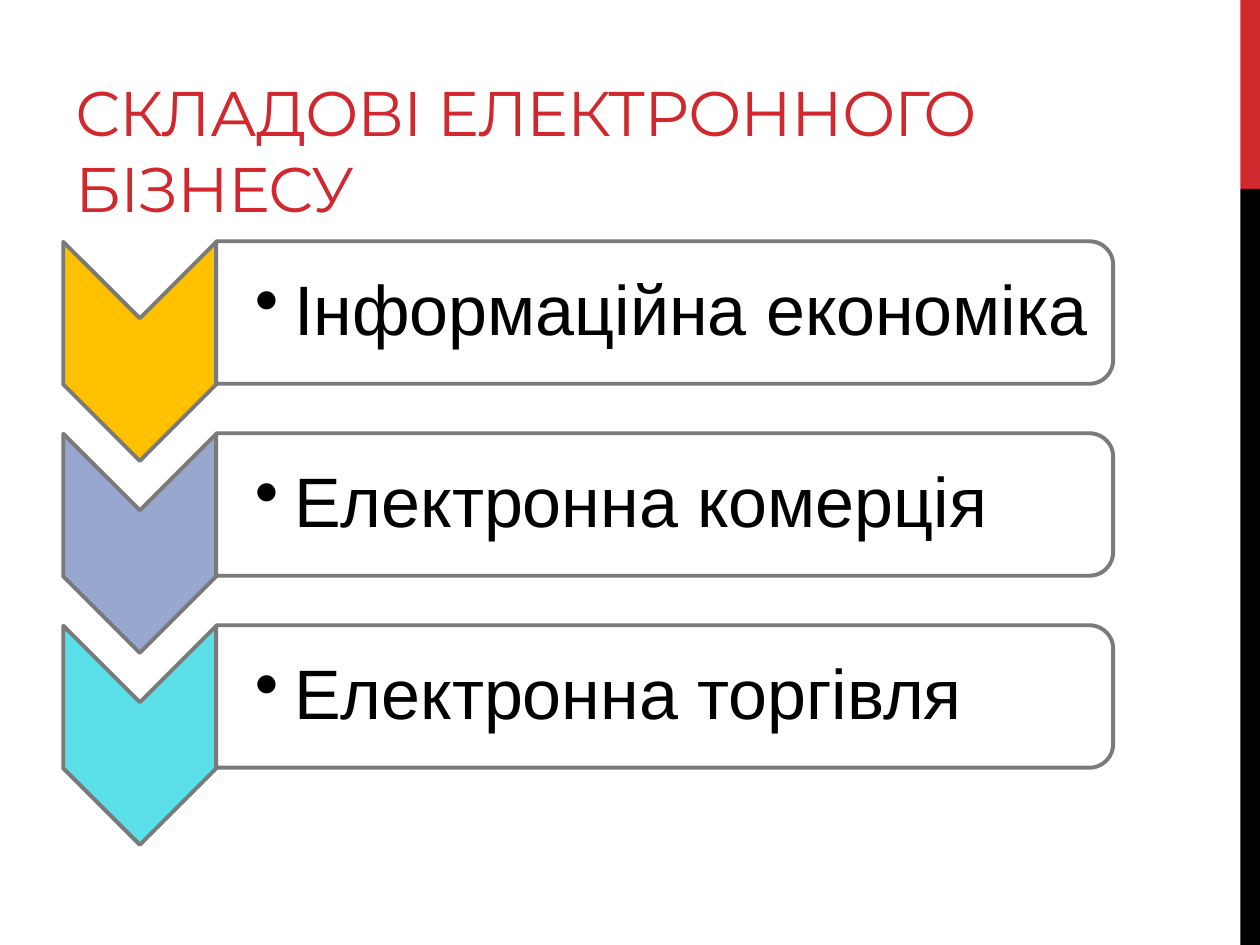
from pptx import Presentation
from pptx.dml.color import RGBColor
from pptx.enum.shapes import MSO_SHAPE as SHAPE
from pptx.enum.text import MSO_ANCHOR as ANCHOR
from pptx.oxml.ns import qn
from pptx.util import Pt
from lxml.etree import SubElement

RED = RGBColor(0xD1, 0x28, 0x2E)
BLACK = RGBColor(0, 0, 0)
WHITE = RGBColor(0xFF, 0xFF, 0xFF)
GRAY = RGBColor(0x7A, 0x7A, 0x7A)
AMBER = RGBColor(0xFF, 0xC0, 0x00)
LAVENDER = RGBColor(0x97, 0xA7, 0xD0)
CYAN = RGBColor(0x5B, 0xDF, 0xE9)

prs = Presentation()
prs.slide_width, prs.slide_height = Pt(720), Pt(540)
s = prs.slides.add_slide(prs.slide_layouts[6])


def add_shape(kind, x, y, w, h, fill, line=None):
    sp = s.shapes.add_shape(kind, Pt(x), Pt(y), Pt(w), Pt(h))
    sp.shadow.inherit = False
    sp.fill.solid()
    sp.fill.fore_color.rgb = fill
    if line is None:
        sp.line.fill.background()
    else:
        sp.line.color.rgb = line
        sp.line.width = Pt(2.25)
    return sp


def add_text(x, y, w, h, text, font, size, color, anchor):
    tf = s.shapes.add_textbox(Pt(x), Pt(y), Pt(w), Pt(h)).text_frame
    tf.word_wrap = True
    tf.vertical_anchor = anchor
    r = tf.paragraphs[0].add_run()
    r.text = text
    r.font.name = font
    r.font.size = Pt(size)
    r.font.color.rgb = color
    return tf


add_shape(SHAPE.RECTANGLE, 708.75, 0, 11.25, 108, RED)
add_shape(SHAPE.RECTANGLE, 708.75, 108, 11.25, 432, BLACK)

tf = add_text(36, 12, 624, 120, "СКЛАДОВІ ЕЛЕКТРОННОГО БІЗНЕСУ",
              "Montserrat", 36, RED, ANCHOR.BOTTOM)
tf.paragraphs[0].runs[0]._r.get_or_add_rPr().set("spc", "-60")

items = [
    ("Інформаційна економіка", AMBER),
    ("Електронна комерція", LAVENDER),
    ("Електронна торгівля", CYAN),
]
for i, (text, color) in enumerate(items):
    dy = i * 109.7
    sp = add_shape(SHAPE.CHEVRON, 17.3, 157 + dy, 125.2, 87.5, color, GRAY)
    sp.rotation = 90

    sp = add_shape(SHAPE.ROUND_2_SAME_RECTANGLE, 339.1, -77.7 + dy, 81.4, 512.6,
                   WHITE, GRAY)
    sp.rotation = 90
    clr = sp._element.spPr.find(qn("a:solidFill")).find(qn("a:srgbClr"))
    SubElement(clr, qn("a:alpha")).set("val", "90000")

    tf = add_text(123.4, 142 + dy, 508.3, 73.4, text, "Arial", 40, BLACK, ANCHOR.MIDDLE)
    tf.margin_left = Pt(22.3)
    tf.margin_right = tf.margin_top = tf.margin_bottom = Pt(2)
    p = tf.paragraphs[0]
    p.line_spacing = 0.9
    pPr = p._p.get_or_add_pPr()
    pPr.set("marL", str(Pt(22.5)))
    pPr.set("indent", str(-Pt(22.5)))
    SubElement(pPr, qn("a:buChar")).set("char", "•")

prs.save("out.pptx")
